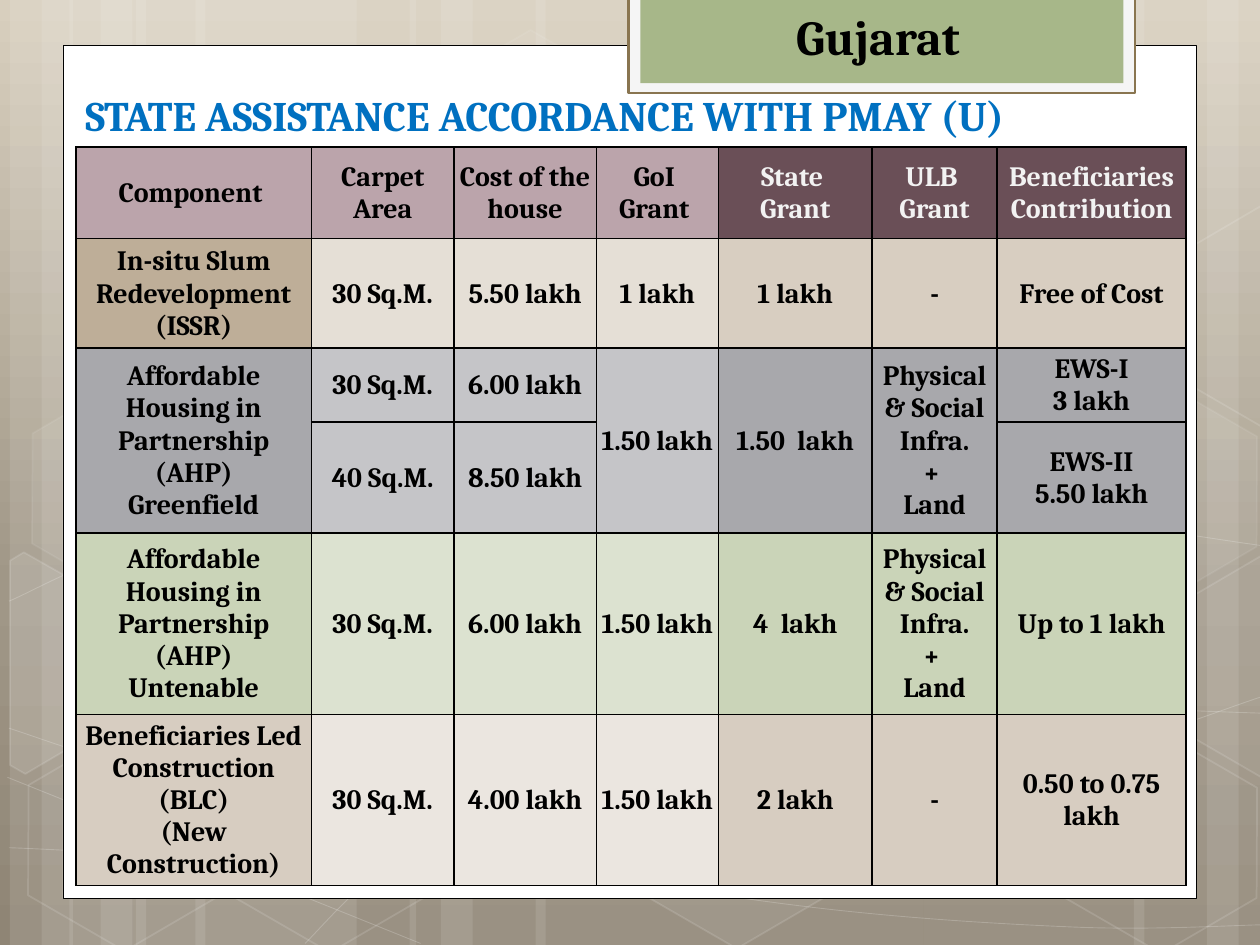
import math
from copy import deepcopy

from lxml import etree
from pptx import Presentation
from pptx import util as u
from pptx.dml.color import RGBColor
from pptx.enum import shapes, text
from pptx.oxml.ns import qn

FONT = "Cambria"
C = {"white": "FFFFFF", "black": "000000", "title": "0070C0", "frame": "F5F5F5",
     "edge": "897550", "tab": "A7B789", "light": "F2F2F2"}
BACKDROP = [(0, "D8CFBE"), (62, "A09787"), (100, "8F8575")]

# Backdrop, in cm: bands are (left, width), hexagons (left, top, fill %, line %)
BANDS = [(2.74, 4.45), (0.2, 1.27), (0.84, 2.11), (3.94, 4.45), (1.4, 1.27), (2.03, 2.11),
         (18.62, 4.45), (24.33, 1.27), (22.86, 2.11), (10.8, 7.82), (8.26, 1.27), (8.89, 2.11)]
CURVES = [
    [(0.18, 17.09), (4.83, 17.22), (11.63, 16.89), (20.12, 15.67), (25.58, 14)],
    [(0.18, 12.12), (3.07, 10.95), (8.81, 9.83), (16.61, 9.83), (25.58, 11.02)],
    [(0.15, 15.67), (8.48, 19.02)],
    [(0.18, 14.68), (3.25, 15.65), (9.07, 17.09), (15.95, 18.24), (21.67, 18.69), (25.58, 18.64)],
    [(6.15, 19.02), (7.67, 17.55), (9.86, 16.23), (11.94, 15.47), (15.44, 14.68),
     (20.17, 14.27), (25.55, 14.38)],
]
HEXAGONS = [(8.48, 0.91, 4, 8), (12.62, 14.96, 6, 12), (0.28, 15.01, 0, 12), (0.36, 7.92, 7, 8),
            (4.42, 15.04, 0, 12), (19.13, 11.51, 10, 12), (21.18, 15.06, 0, 12),
            (21.18, 7.98, 7, 8)]
# Hexagons cut by the slide edge: corners, centre, fill %
CUT_HEXAGONS = [
    ([(0.2, 11.3), (0.48, 11.13), (2.44, 12.24), (2.41, 14.48), (0.51, 15.6), (0.2, 15.42)],
     (0.91, 13.59), 10),
    ([(23.52, 12.32), (25.43, 11.2), (25.63, 11.33), (25.63, 15.57), (25.45, 15.67),
      (23.52, 14.55)], (25.02, 13.21), 4),
    ([(23.52, 5.26), (25.43, 4.14), (25.65, 4.27), (25.63, 8.51), (25.45, 8.61),
      (23.52, 7.49)], (25.02, 6.12), 0),
]

# Table: each row has its text, then the fills of columns 0, 1-3 and 4-6
INFRA = "Physical & Social Infra.\n+ \nLand"
AHP = "Affordable Housing in Partnership (AHP)\n"
GREY = ("A8A8AC", "C5C5C8", "A8A8AC")
ROWS = [
    (["Component ", "Carpet Area", "Cost of the house", "GoI \nGrant ", "State \nGrant",
      "ULB \nGrant", "Beneficiaries Contribution"], ("BBA4AB", "BBA4AB", "6A4F57")),
    (["In-situ Slum Redevelopment (ISSR)", "30 Sq.M.", "5.50 lakh", "1 lakh", "1 lakh", "-",
      "Free of Cost"], ("BEAE98", "E5DFD6", "D8CEC1")),
    ([AHP + "Greenfield", "30 Sq.M.", "6.00 lakh", "1.50 lakh", "1.50  lakh", INFRA,
      "EWS-I\n3 lakh"], GREY),
    (["", "40 Sq.M.", "8.50 lakh", "", "", "", "EWS-II\n5.50 lakh"], GREY),
    ([AHP + "Untenable", "30 Sq.M.", "6.00 lakh", "1.50 lakh", "4  lakh", INFRA,
      "Up to 1 lakh"], ("CAD4B8", "DCE2D0", "CAD4B8")),
    (["Beneficiaries Led Construction (BLC)\n(New Construction)", "30 Sq.M.", "4.00 lakh",
      "1.50 lakh", "2 lakh", "-", "0.50 to 0.75 lakh"], ("D7CDC1", "EBE6E0", "D7CDC1")),
]
COL_W = [4.75, 2.87, 2.87, 2.46, 3.1, 2.52, 3.81]
ROW_H = [1.85, 2.21, 1.49, 2.23, 3.66, 3.45]
MERGED_COLS, MERGED_ROW = (0, 3, 4, 5), 2


def rgb(name):
    return RGBColor.from_string(C.get(name, name))


def paint(fill, color, alpha=100):
    """Solid fill with opacity in percent; zero means no fill."""
    if not alpha:
        fill.background()
        return
    fill.solid()
    fill.fore_color.rgb = rgb(color)
    if alpha < 100:
        clr = fill._xPr.find(qn("a:solidFill"))[0]
        etree.SubElement(clr, qn("a:alpha"), val=str(alpha * 1000))


def style(sp, fill, fill_a=100, line=None, width=1, line_a=100):
    sp.shadow.inherit = False
    paint(sp.fill, fill, fill_a)
    if line:
        paint(sp.line.fill, line, line_a)
        sp.line.width = u.Pt(width)
    else:
        sp.line.fill.background()


def add(parent, kind, x, y, w, h):
    return parent.shapes.add_shape(kind, u.Cm(x), u.Cm(y), u.Cm(w), u.Cm(h))


def outline(parent, points, close):
    pts = [(u.Cm(x), u.Cm(y)) for x, y in points]
    fb = parent.shapes.build_freeform(*pts[0])
    fb.add_line_segments(pts[1:], close=close)
    return fb.convert_to_shape()


def smooth(sp):
    """Turn straight segments into Bezier curves through the same knots."""
    knots = [(int(pt.get("x")), int(pt.get("y"))) for pt in sp.element.iter(qn("a:pt"))]
    k = [knots[0], *knots, knots[-1]]
    for seg, a, b, c, d in zip(list(sp.element.iter(qn("a:lnTo"))), k, k[1:], k[2:], k[3:]):
        seg.tag = qn("a:cubicBezTo")
        controls = [[q + (r - p) // 6 for p, q, r in zip(a, b, c)],
                    [r - (e - q) // 6 for q, r, e in zip(b, c, d)]]
        for i, (x, y) in enumerate(controls):
            seg.insert(i, etree.Element(qn("a:pt"), x=str(x), y=str(y)))


def turn(points, centre, degrees):
    cos, sin = math.cos(math.radians(degrees)), math.sin(math.radians(degrees))
    cx, cy = centre
    return [(cx + (x - cx) * cos - (y - cy) * sin, cy + (x - cx) * sin + (y - cy) * cos)
            for x, y in points]


def write(tf, words, size, color, align):
    tf.text = words
    for p in tf.paragraphs:
        p.alignment = align
        f = p.font
        f.name, f.size, f.bold, f.color.rgb = FONT, u.Pt(size), True, rgb(color)


def border(cell):
    for i, side in enumerate(("lnL", "lnR", "lnT", "lnB")):
        ln = etree.Element(qn("a:" + side), w=str(u.Pt(1)))
        fill = etree.SubElement(ln, qn("a:solidFill"))
        etree.SubElement(fill, qn("a:srgbClr"), val=C["black"])
        cell._tc.get_or_add_tcPr().insert(i, ln)


prs = Presentation()
prs.slide_width, prs.slide_height = u.Cm(25.4), u.Cm(19.05)
layout = prs.slide_layouts[5]
s = prs.slides.add_slide(layout)
RECT = shapes.MSO_SHAPE.RECTANGLE

# Gradient background
bg = s.background.fill
bg.gradient()
bg.gradient_angle = 270
stop_list = s.element.xpath(".//a:gsLst")[0]
stop_list.insert(1, deepcopy(stop_list[0]))
for stop, (pos, color) in zip(bg.gradient_stops, BACKDROP):
    stop.position, stop.color.rgb = pos / 100, rgb(color)

# Backdrop group: bands, curves and hexagons
backdrop = s.shapes.add_group_shape()
for x, w in BANDS:
    style(add(backdrop, RECT, x, 0, w, 19.05), "white", 10)
for knots in CURVES:
    sp = outline(backdrop, knots, False)
    smooth(sp)
    style(sp, "white", 0, "white", 0.5, 20)
for x, y, fill_a, line_a in HEXAGONS:
    sp = add(backdrop, shapes.MSO_SHAPE.HEXAGON, x, y, 4.45, 3.86)
    sp.adjustments[0] = 0.285
    sp.rotation = 30
    style(sp, "white", fill_a, "white", 1, line_a)
for corners, centre, fill_a in CUT_HEXAGONS:
    sp = outline(backdrop, turn(corners, centre, -30), True)
    sp.rotation = 30
    style(sp, "white", fill_a, "white", 1, 12)

# White panel and state tab
panel = add(s, RECT, 1.27, 0.91, 22.86, 17.2)
style(panel, "white", line="black", width=0.5)
frame = add(s, RECT, 12.67, -0.05, 10.21, 1.93)
style(frame, "frame", line="edge", width=1.25)
tab = add(s, RECT, 12.91, -0.05, 9.74, 1.73)
style(tab, "tab")

# The decoration belongs to the layout
layout_tree = layout.element.xpath("./p:cSld/p:spTree")[0]
for sp in (backdrop, panel, frame, tab):
    layout_tree.append(sp.element)
for i, props in enumerate(layout_tree.xpath(".//p:cNvPr"), 1):
    props.set("id", str(i))

# State name and title
tf = s.shapes.add_textbox(u.Cm(15.8), 0, u.Cm(3.94), u.Cm(1.45)).text_frame
tf.word_wrap = False
write(tf, "Gujarat", 28, "black", text.PP_ALIGN.LEFT)
title = s.shapes.title
title.left, title.top, title.width, title.height = (u.Cm(v) for v in (0.2, 1.68, 24.13, 1.27))
title.text_frame.margin_left = u.Cm(1.52)
title.text_frame.vertical_anchor = text.MSO_ANCHOR.MIDDLE
write(title.text_frame, "STATE ASSISTANCE ACCORDANCE WITH PMAY (U)", 24, "title",
      text.PP_ALIGN.LEFT)

# Table
table = s.shapes.add_table(len(ROWS), len(COL_W), u.Cm(1.53), u.Cm(2.96),
                           u.Cm(sum(COL_W)), u.Cm(sum(ROW_H))).table
table.first_row = table.horz_banding = False
for col, w in zip(table.columns, COL_W):
    col.width = u.Cm(w)
for row, h in zip(table.rows, ROW_H):
    row.height = u.Cm(h)
for i, (words, fills) in enumerate(ROWS):
    for j, word in enumerate(words):
        cell = table.cell(i, j)
        cell.vertical_anchor = text.MSO_ANCHOR.MIDDLE
        cell.margin_left = cell.margin_right = cell.margin_top = u.Cm(0.02)
        cell.margin_bottom = 0
        paint(cell.fill, fills[(j + 2) // 3])
        border(cell)
        write(cell.text_frame, word, 16, "light" if i == 0 and j > 3 else "black",
              text.PP_ALIGN.CENTER)
for j in MERGED_COLS:
    table.cell(MERGED_ROW, j).merge(table.cell(MERGED_ROW + 1, j))

prs.save("out.pptx")
